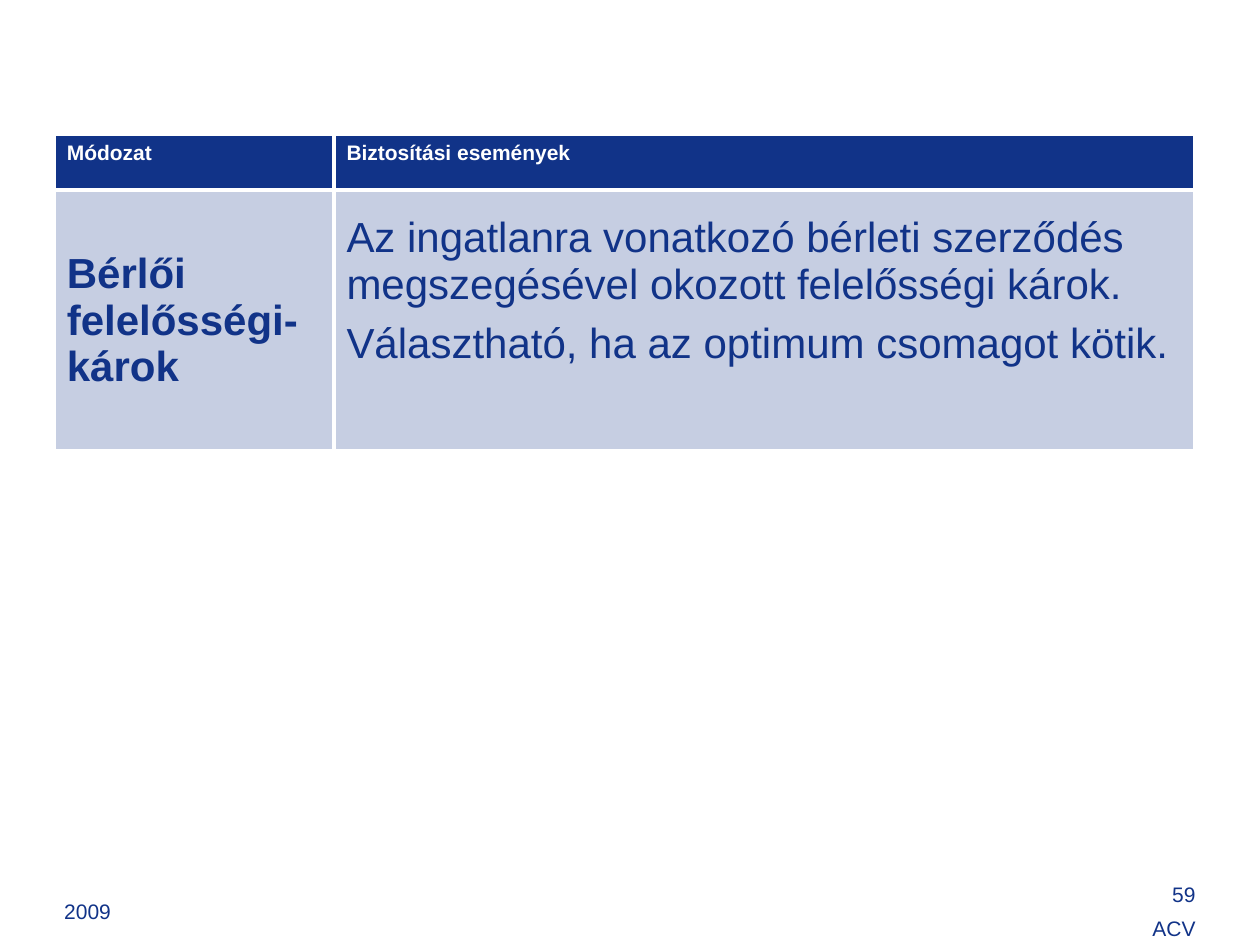
from dataclasses import dataclass

from lxml import etree
from pptx import Presentation
from pptx.dml.color import RGBColor
from pptx.enum import text
from pptx.oxml import ns
from pptx.util import Pt

NAVY = RGBColor(0x11, 0x33, 0x88)
PALE = RGBColor(0xC6, 0xCE, 0xE2)
WHITE = RGBColor(0xFF, 0xFF, 0xFF)
FONT = "Arial"
MARGIN_X = 7.2
MARGIN_Y = 3.6


@dataclass
class Cell:
    lines: list[str]
    fill: RGBColor
    color: RGBColor
    size: float
    bold: bool = True
    anchor: text.MSO_ANCHOR = text.MSO_ANCHOR.TOP
    bottom: float = MARGIN_Y


@dataclass
class Footer:
    lines: list[str]
    left: float
    inset_top: float
    align: text.PP_ALIGN


TABLE_LEFT, TABLE_TOP = 31, 77
COLUMNS = [159.8, 491.8]
ROWS = [31.7, 149]
MIDDLE = text.MSO_ANCHOR.MIDDLE
CELLS = [
    [
        Cell(["Módozat"], NAVY, WHITE, 12),
        Cell(["Biztosítási események"], NAVY, WHITE, 12),
    ],
    [
        Cell(["Bérlői felelősségi-károk"], PALE, NAVY, 24, anchor=MIDDLE),
        Cell(
            [
                "Az ingatlanra vonatkozó bérleti szerződés "
                "megszegésével okozott felelősségi károk.",
                "Választható, ha az optimum csomagot kötik.",
            ],
            PALE, NAVY, 24, bold=False, anchor=MIDDLE, bottom=37.4,
        ),
    ],
]
FOOTERS = [
    Footer(["2009"], 36.7, 19.2, text.PP_ALIGN.LEFT),
    Footer(["59", "ACV"], 516.2, 7.2, text.PP_ALIGN.RIGHT),
]


def write(tf, lines: list[str], *, size: float, color: RGBColor,
          bold: bool = False, align=text.PP_ALIGN.LEFT, gap: float = 0) -> None:
    for i, line in enumerate(lines):
        p = tf.paragraphs[0] if i == 0 else tf.add_paragraph()
        p.alignment = align
        p.space_before = Pt(gap if i else 0)
        r = p.add_run()
        r.text = line
        r.font.name = FONT
        r.font.size = Pt(size)
        r.font.bold = bold
        r.font.color.rgb = color


def set_borders(cell, color: RGBColor, width: float) -> None:
    props = cell._tc.get_or_add_tcPr()
    for i, side in enumerate(("lnL", "lnR", "lnT", "lnB")):
        line = etree.Element(ns.qn(f"a:{side}"), w=str(Pt(width)))
        fill = etree.SubElement(line, ns.qn("a:solidFill"))
        etree.SubElement(fill, ns.qn("a:srgbClr"), val=str(color))
        props.insert(i, line)


def draw_table(s) -> None:
    table = s.shapes.add_table(
        len(ROWS), len(COLUMNS), Pt(TABLE_LEFT), Pt(TABLE_TOP),
        Pt(sum(COLUMNS)), Pt(sum(ROWS))).table
    for column, width in zip(table.columns, COLUMNS):
        column.width = Pt(width)
    for row, height, specs in zip(table.rows, ROWS, CELLS):
        row.height = Pt(height)
        for cell, c in zip(row.cells, specs):
            cell.fill.solid()
            cell.fill.fore_color.rgb = c.fill
            cell.vertical_anchor = c.anchor
            cell.margin_left = cell.margin_right = Pt(MARGIN_X)
            cell.margin_top = Pt(MARGIN_Y)
            cell.margin_bottom = Pt(c.bottom)
            set_borders(cell, WHITE, 2.25)
            write(cell.text_frame, c.lines, size=c.size, color=c.color,
                  bold=c.bold, gap=0.3 * c.size)


def draw_footer(s, f: Footer) -> None:
    tf = s.shapes.add_textbox(Pt(f.left), Pt(496.8), Pt(167), Pt(43.2)).text_frame
    tf.word_wrap = True
    tf.margin_left = tf.margin_right = tf.margin_bottom = 0
    tf.margin_top = Pt(f.inset_top)
    write(tf, f.lines, size=12, color=NAVY, align=f.align, gap=4.8)


def main() -> None:
    prs = Presentation()
    prs.slide_width, prs.slide_height = Pt(720), Pt(540)
    s = prs.slides.add_slide(prs.slide_layouts[6])
    for f in FOOTERS:
        draw_footer(s, f)
    draw_table(s)
    prs.save("out.pptx")


if __name__ == "__main__":
    main()
